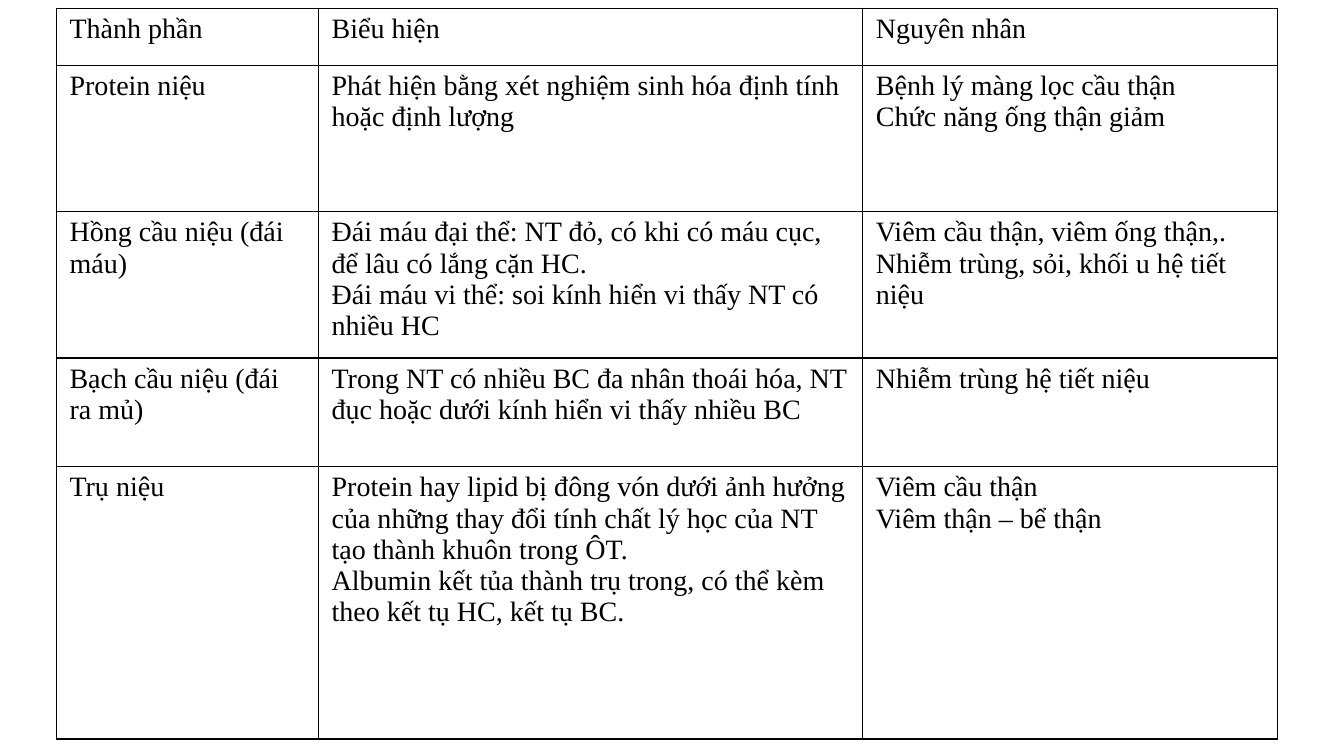
import pptx
import pptx.util
import pptx.dml.color
import pptx.oxml

BLACK = pptx.dml.color.RGBColor(0, 0, 0)
WHITE = pptx.dml.color.RGBColor(255, 255, 255)

COLS = [19.5, 40.5, 30.83]
ROWS = [7.6, 19.33, 19.33, 14.4, 36]
CELLS = [
    ["Thành phần", "Biểu hiện", "Nguyên nhân"],
    ["Protein niệu",
     "Phát hiện bằng xét nghiệm sinh hóa định tính hoặc định lượng",
     "Bệnh lý màng lọc cầu thận\nChức năng ống thận giảm"],
    ["Hồng cầu niệu (đái máu)",
     "Đái máu đại thể: NT đỏ, có khi có máu cục, để lâu có lắng cặn HC.\n"
     "Đái máu vi thể: soi kính hiển vi thấy NT có nhiều HC",
     "Viêm cầu thận, viêm ống thận,.\nNhiễm trùng, sỏi, khối u hệ tiết niệu"],
    ["Bạch cầu niệu (đái ra mủ)",
     "Trong NT có nhiều BC đa nhân thoái hóa, NT đục hoặc dưới kính hiển vi thấy nhiều BC",
     "Nhiễm trùng hệ tiết niệu"],
    ["Trụ niệu",
     "Protein hay lipid bị đông vón dưới ảnh hưởng của những thay đổi tính chất lý học "
     "của NT tạo thành khuôn trong ÔT.\n"
     "Albumin kết tủa thành trụ trong, có thể kèm theo kết tụ HC, kết tụ BC.",
     "Viêm cầu thận\nViêm thận – bể thận"],
]


class Page:
    """Draws on one slide, with lengths in percent of its width and height."""

    face = "Times New Roman"
    size = pptx.util.Pt(20)
    rule = pptx.util.Pt(1)
    side = pptx.util.Inches(0.13)
    edge = pptx.util.Inches(0.05)

    def __init__(self, deck):
        self.deck = deck
        self.slide = deck.slides.add_slide(deck.slide_layouts[6])

    def wide(self, share):
        return round(self.deck.slide_width * share / 100)

    def high(self, share):
        return round(self.deck.slide_height * share / 100)

    def table(self, left, top, cols, rows, cells):
        frame = self.slide.shapes.add_table(
            len(rows), len(cols), self.wide(left), self.high(top),
            self.wide(sum(cols)), self.high(sum(rows)))
        grid = frame.table
        grid.first_row = grid.horz_banding = False
        for col, share in zip(grid.columns, cols):
            col.width = self.wide(share)
        for row, share, texts in zip(grid.rows, rows, cells):
            row.height = self.high(share)
            for cell, text in zip(row.cells, texts):
                self.fill(cell, text)

    def fill(self, cell, text):
        cell.text = text
        cell.margin_left = cell.margin_right = self.side
        cell.margin_top = cell.margin_bottom = self.edge
        cell.fill.solid()
        cell.fill.fore_color.rgb = WHITE
        for para in cell.text_frame.paragraphs:
            para.font.name = self.face
            para.font.size = self.size
            para.font.color.rgb = BLACK
        self.frame(cell)

    def frame(self, cell):
        props = cell._tc.get_or_add_tcPr()
        for spot, name in enumerate(["lnL", "lnR", "lnT", "lnB"]):
            props.insert(spot, pptx.oxml.parse_xml(
                f'<a:{name} xmlns:a="http://schemas.openxmlformats.org/drawingml/2006/main" '
                f'w="{self.rule}"><a:solidFill><a:srgbClr val="{BLACK}"/></a:solidFill></a:{name}>'))


def main():
    deck = pptx.Presentation()
    deck.slide_width = pptx.util.Inches(13.33)
    deck.slide_height = pptx.util.Inches(7.5)
    Page(deck).table(4.2, 1.1, COLS, ROWS, CELLS)
    deck.save("out.pptx")


if __name__ == "__main__":
    main()
